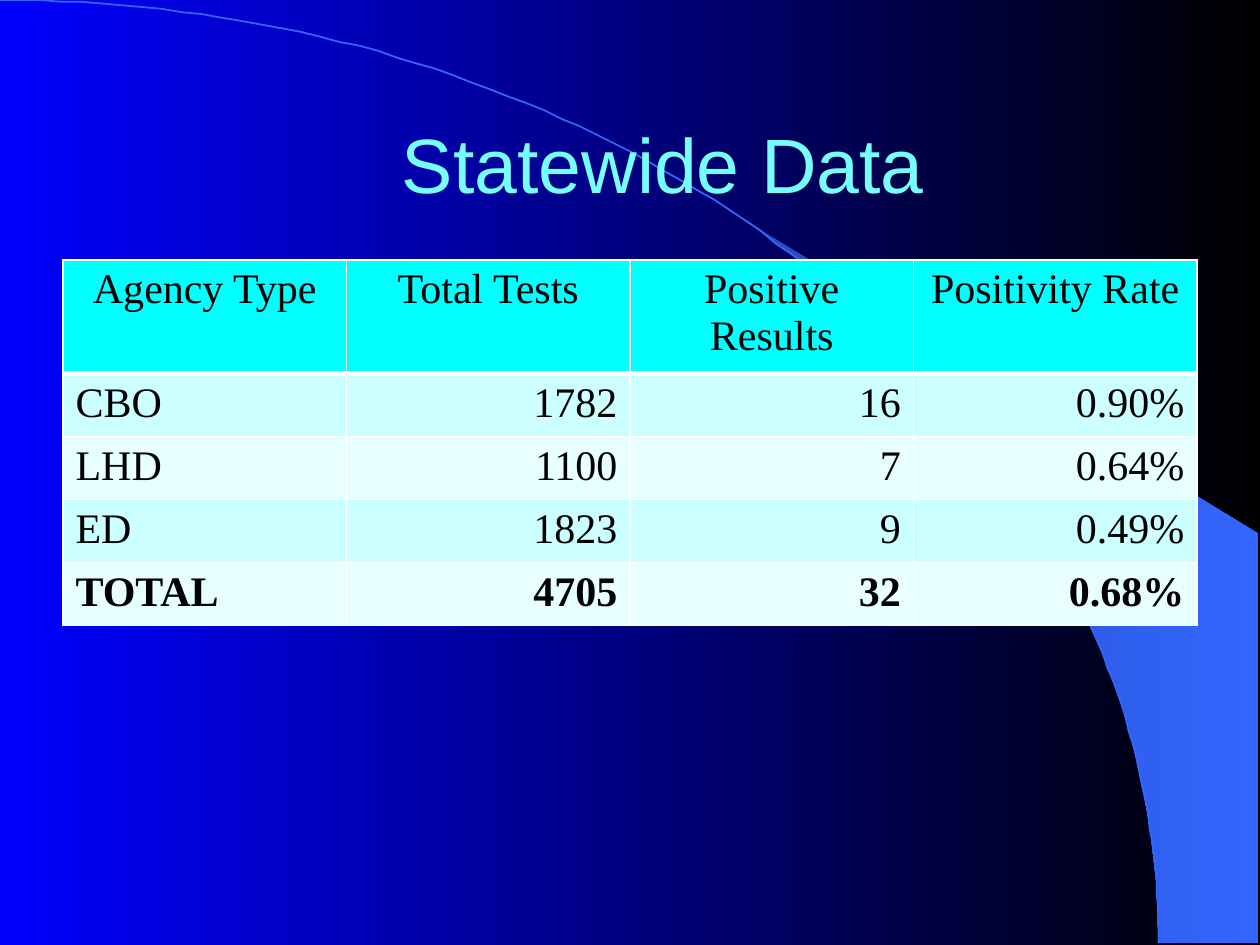
from math import cos, radians, sin

from lxml import etree
from pptx import Presentation
from pptx.dml.color import RGBColor
from pptx.enum.text import MSO_ANCHOR as Anchor, PP_ALIGN as Align
from pptx.oxml.ns import qn
from pptx.util import Pt

COLORS = {
    "background_left": "0000FF", "background_right": "000000",
    "wedge_left": "2449B6", "wedge_right": "3366FF", "arc": "3366FF",
    "title": "76FFFF", "text": "000000", "border": "FFFFFF",
    "header": "00FFFF", "odd_row": "CCFFFF", "even_row": "E7FFFF",
}
ROWS = [
    ["Agency Type", "Total Tests", "Positive Results", "Positivity Rate"],
    ["CBO", "1782", "16", "0.90%"],
    ["LHD", "1100", "7", "0.64%"],
    ["ED", "1823", "9", "0.49%"],
    ["TOTAL", "4705", "32", "0.68%"],
]
WEDGE_START = 50.2  # degrees above the horizontal where the wedge meets the arc


def color(name):
    return RGBColor.from_string(COLORS[name])


def fill_gradient(fill, left, right):
    fill.gradient()
    fill.gradient_angle = 0
    for stop, name, position in zip(fill.gradient_stops, (left, right), (0, 1)):
        stop.color.rgb = color(name)
        stop.position = position


def write_text(frame, text, *, font, size, color_name, align=Align.LEFT, bold=False, indent=0):
    paragraph = frame.paragraphs[0]
    paragraph.alignment = align
    if indent:
        paragraph._p.get_or_add_pPr().set("marL", str(Pt(indent)))
    run = paragraph.add_run()
    run.text = text
    run.font.name = font
    run.font.size = Pt(size)
    run.font.bold = bold
    run.font.color.rgb = color(color_name)


def arc_points(box, start, steps):
    """Points on a quarter ellipse from start degrees down to the box's bottom right."""
    left, top, width, height = box
    angles = [radians(start * (1 - step / steps)) for step in range(steps + 1)]
    return [(left + width * cos(a), top + height * (1 - sin(a))) for a in angles]


def add_outline(slide, points, close):
    builder = slide.shapes.build_freeform(*points[0], scale=Pt(1))
    builder.add_line_segments(points[1:], close=close)
    shape = builder.convert_to_shape()
    shape.shadow.inherit = False
    return shape


def add_backdrop(slide, box):
    left, top, width, height = box
    fill_gradient(slide.background.fill, "background_left", "background_right")

    right, bottom = left + width - 0.7, top + height - 0.7
    arc_box = (left, top, 662.4, height - 0.7)
    wedge_points = arc_points(arc_box, WEDGE_START, 14) + [(right, bottom), (right, top + 304.6)]
    wedge = add_outline(slide, wedge_points, close=True)
    fill_gradient(wedge.fill, "wedge_left", "wedge_right")
    wedge.line.fill.background()

    arc = add_outline(slide, arc_points(arc_box, 90, 90), close=False)
    arc.fill.background()
    arc.line.color.rgb = color("arc")
    arc.line.width = Pt(1)


def add_title(slide, box):
    frame = slide.shapes.add_textbox(*map(Pt, box)).text_frame
    frame.word_wrap = True
    frame.vertical_anchor = Anchor.MIDDLE
    write_text(frame, "Statewide Data", font="Arial", size=44, color_name="title",
               align=Align.CENTER, indent=38)


def set_borders(cell, bottom_width):
    properties = cell._tc.get_or_add_tcPr()
    for side, width in (("L", 1), ("R", 1), ("T", 1), ("B", bottom_width)):
        line = etree.SubElement(properties, qn(f"a:ln{side}"), w=str(Pt(width)))
        solid = etree.SubElement(line, qn("a:solidFill"))
        etree.SubElement(solid, qn("a:srgbClr"), val=COLORS["border"])


def add_data_table(slide, box):
    table = slide.shapes.add_table(len(ROWS), len(ROWS[0]), *map(Pt, box)).table
    for row_index, row in enumerate(ROWS):
        is_header = row_index == 0
        fill_name = "header" if is_header else "odd_row" if row_index % 2 else "even_row"
        for column_index, text in enumerate(row):
            cell = table.cell(row_index, column_index)
            set_borders(cell, 3 if is_header else 1)
            cell.fill.solid()
            cell.fill.fore_color.rgb = color(fill_name)
            align = Align.CENTER if is_header else Align.RIGHT if column_index else Align.LEFT
            write_text(cell.text_frame, text, font="Times New Roman", size=24,
                       color_name="text", align=align, bold=row[0] == "TOTAL")


def main():
    presentation = Presentation()
    presentation.slide_width, presentation.slide_height = Pt(720), Pt(540)
    slide = presentation.slides.add_slide(presentation.slide_layouts[6])
    add_backdrop(slide, (0, 0, 720, 540))
    add_title(slide, (54, 48, 612, 90))
    add_data_table(slide, (36, 148.5, 648, 146))
    presentation.save("out.pptx")


if __name__ == "__main__":
    main()
